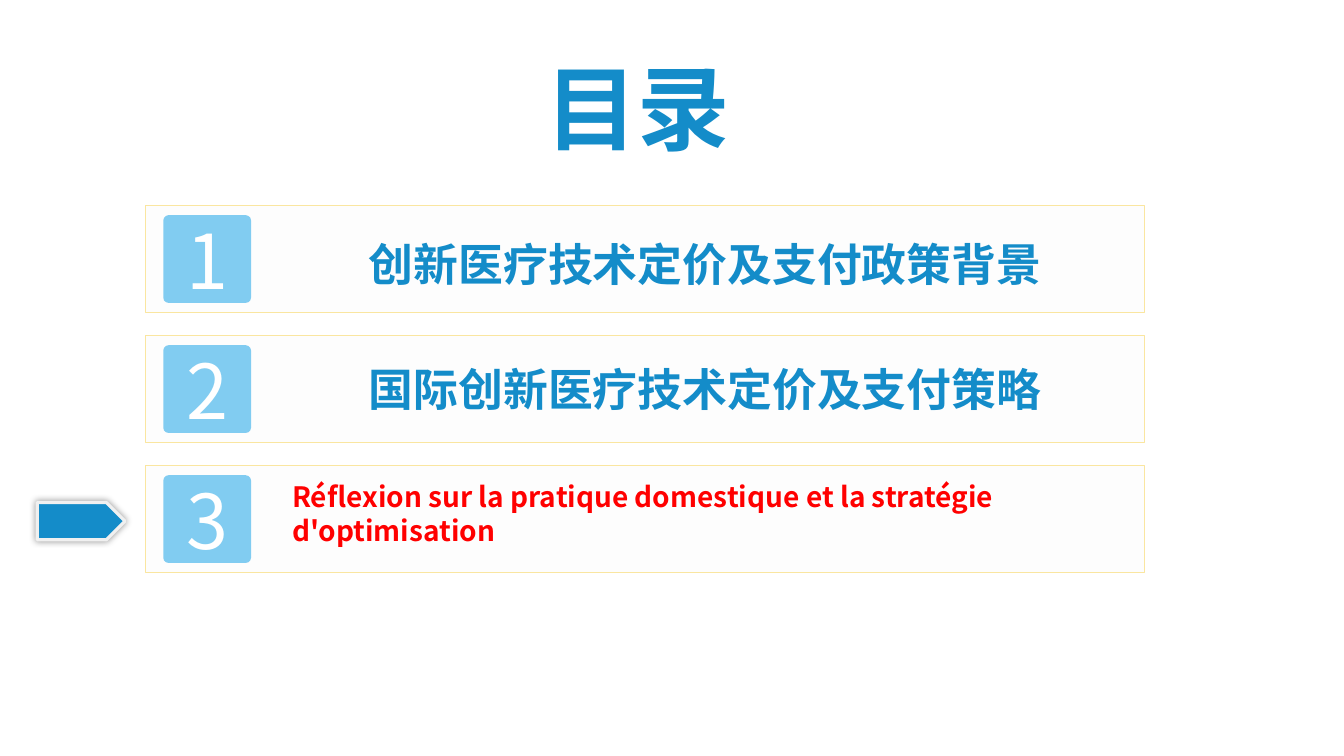
from lxml import etree
from pptx import Presentation
from pptx import util as u
from pptx.dml.color import RGBColor
from pptx.enum import shapes, text
from pptx.oxml.ns import qn

WIDTH, HEIGHT = 13.33, 7.5
FONT = "Noto Sans CJK SC"
COLOURS = {
    "blue": "148CC9",
    "sky": "81CCF1",
    "panel": "FDFDFD",
    "border": "FAE6A0",
    "edge": "F0F0F0",
    "red": "FF0000",
    "white": "FFFFFF",
    "black": "000000",
}
ROW_LEFT, ROW_TOP, ROW_WIDTH, ROW_HEIGHT = 1.44, 2.04, 9.91, 1.06
ROW_PITCH = 1.29
TILE = 0.87

# words, colour, size, then left, drop below the row's top, width and height
TOPICS = [
    ("创新医疗技术定价及支付政策背景", "blue", 32, (3.56, 0.26, 8.24, 0.64)),
    ("国际创新医疗技术定价及支付策略", "blue", 32, (3.56, 0.21, 8.64, 0.64)),
    ("Réflexion sur la pratique domestique et la stratégie d'optimisation",
     "red", 20, (2.8, 0.09, 7.26, 0.77)),
]


def colour(name):
    return RGBColor.from_string(COLOURS[name])


def inches(*lengths):
    return [u.Inches(length) for length in lengths]


def write(shape, words, *, size, ink, bold=False, align=text.PP_ALIGN.LEFT,
          anchor=text.MSO_ANCHOR.TOP, wrap=True, spacing=None,
          margins=(0.1, 0.05, 0.1, 0.05)):
    """Put one formatted paragraph in the shape; margins run left, top, right, bottom."""
    frame = shape.text_frame
    frame.word_wrap = wrap
    frame.auto_size = text.MSO_AUTO_SIZE.NONE
    frame.vertical_anchor = anchor
    (frame.margin_left, frame.margin_top,
     frame.margin_right, frame.margin_bottom) = inches(*margins)
    para = frame.paragraphs[0]
    para.alignment = align
    para.line_spacing = spacing
    span = para.add_run()
    span.text = words
    span.font.name = FONT
    span.font.size = u.Pt(size)
    span.font.bold = bold
    span.font.color.rgb = colour(ink)
    latin = span.font._element.find(qn("a:latin"))
    east_asian = etree.Element(qn("a:ea"), typeface=FONT)
    latin.addnext(east_asian)


def add_block(page, kind, place, fill, line=None, weight=1):
    block = page.shapes.add_shape(kind, *inches(*place))
    block.shadow.inherit = False
    block.fill.solid()
    block.fill.fore_color.rgb = colour(fill)
    if line:
        block.line.color.rgb = colour(line)
        block.line.width = u.Pt(weight)
    else:
        block.line.fill.background()
    return block


def add_glow(block, blur, opacity):
    """Give the block a soft dark shadow spread evenly on all sides."""
    effects = block._element.spPr.find(qn("a:effectLst"))
    shadow = etree.SubElement(effects, qn("a:outerShdw"),
                              blurRad=str(u.Pt(blur)), dist="0", dir="0",
                              algn="ctr", rotWithShape="0")
    tint = etree.SubElement(shadow, qn("a:srgbClr"), val=COLOURS["black"])
    etree.SubElement(tint, qn("a:alpha"), val=str(opacity * 1000))


def add_title(page, words):
    title = page.shapes.title
    title.left, title.top, title.width, title.height = inches(5.41, 0.67, 1.95, 0.99)
    write(title, words, size=66, ink="blue", bold=True, wrap=False,
          spacing=0.8, margins=(0, 0.05, 0.1, 0.05))


def add_topic(page, index, words, ink, size, place):
    top = ROW_TOP + index * ROW_PITCH
    add_block(page, shapes.MSO_SHAPE.RECTANGLE,
              (ROW_LEFT, top, ROW_WIDTH, ROW_HEIGHT), "panel", "border")
    left, drop, width, height = place
    box = page.shapes.add_textbox(*inches(left, top + drop, width, height))
    write(box, words, size=size, ink=ink, bold=True)
    tile = add_block(page, shapes.MSO_SHAPE.ROUNDED_RECTANGLE,
                     (1.62, top + (ROW_HEIGHT - TILE) / 2, TILE, TILE), "sky")
    tile.adjustments[0] = 0.06
    write(tile, str(index + 1), size=54, ink="white", wrap=False,
          align=text.PP_ALIGN.CENTER, anchor=text.MSO_ANCHOR.MIDDLE,
          margins=(0, 0, 0, 0))


def add_pointer(page, index):
    """Mark the current topic with an arrow at the left of its row."""
    height = 0.37
    top = ROW_TOP + index * ROW_PITCH + (ROW_HEIGHT - height) / 2 + 0.02
    pointer = add_block(page, shapes.MSO_SHAPE.PENTAGON,
                        (0.37, top, 0.87, height), "blue", "edge", 2.25)
    add_glow(pointer, blur=5, opacity=40)


def main():
    deck = Presentation()
    deck.slide_width, deck.slide_height = inches(WIDTH, HEIGHT)
    page = deck.slides.add_slide(deck.slide_layouts[5])
    add_title(page, "目录")
    for index, topic in enumerate(TOPICS):
        add_topic(page, index, *topic)
    add_pointer(page, len(TOPICS) - 1)
    deck.save("out.pptx")


if __name__ == "__main__":
    main()
